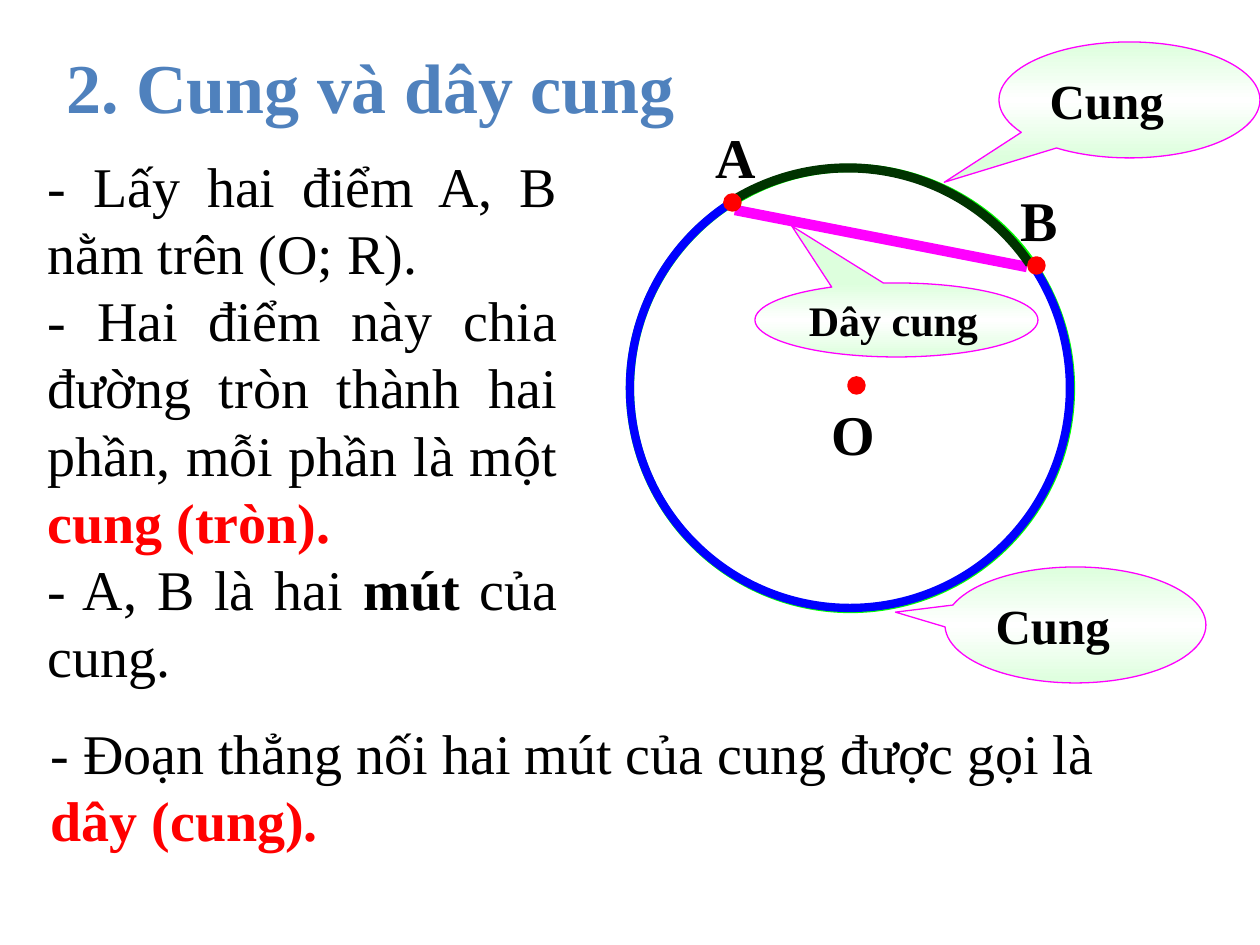
from copy import deepcopy

from lxml.etree import SubElement
from pptx import Presentation
from pptx.dml.color import RGBColor
from pptx.enum.shapes import MSO_CONNECTOR, MSO_SHAPE
from pptx.enum.text import MSO_ANCHOR, PP_ALIGN
from pptx.oxml.ns import qn
from pptx.util import Emu, Pt

BLACK = RGBColor(0x00, 0x00, 0x00)
WHITE = RGBColor(0xFF, 0xFF, 0xFF)
RED = RGBColor(0xFF, 0x00, 0x00)
BLUE = RGBColor(0x00, 0x00, 0xFF)
LIME = RGBColor(0x00, 0xFF, 0x00)
MAGENTA = RGBColor(0xFF, 0x00, 0xFF)
DARK_GREEN = RGBColor(0x00, 0x33, 0x00)
PALE_GREEN = RGBColor(0xDD, 0xFF, 0xDD)
TITLE_BLUE = RGBColor(0x4F, 0x81, 0xBD)
FONT = "Times New Roman"
ANGLE_A, ANGLE_B = 239.2, 325.7


def px(*lengths):
    """Turn pixel lengths into EMU at 126 pixels to the inch."""
    return [Emu(round(length * 914400 / 126)) for length in lengths]


def add_span(para, text, size=32, color=BLACK, bold=False):
    """Add one formatted run, with lines spaced at 1.2 times its size."""
    span = para.add_run()
    span.text = text
    span.font.name = FONT
    span.font.size = Pt(size)
    span.font.color.rgb = color
    span.font.bold = bold
    para.line_spacing = Pt(size * 1.2)


def add_text(page, box, paragraphs, wrap=True, align=PP_ALIGN.LEFT):
    """Add a text box from paragraphs of (text, format) pairs."""
    frame = page.shapes.add_textbox(*px(*box)).text_frame
    frame.word_wrap = wrap
    for index, spans in enumerate(paragraphs):
        para = frame.add_paragraph() if index else frame.paragraphs[0]
        para.alignment = align
        for text, style in spans:
            add_span(para, text, **style)


def add_shape(page, kind, box, fill=None, line=None, width=1):
    """Add a preset shape without shadow, with optional fill and line."""
    shape = page.shapes.add_shape(kind, *px(*box))
    shape.shadow.inherit = False
    if fill is None:
        shape.fill.background()
    else:
        shape.fill.solid()
        shape.fill.fore_color.rgb = fill
    if line is None:
        shape.line.fill.background()
    else:
        shape.line.color.rgb = line
        shape.line.width = Pt(width)
    return shape


def write_middle(shape, spans):
    """Write left-aligned text at mid height inside a shape."""
    frame = shape.text_frame
    frame.word_wrap = True
    frame.vertical_anchor = MSO_ANCHOR.MIDDLE
    para = frame.paragraphs[0]
    para.alignment = PP_ALIGN.LEFT
    for text, style in spans:
        add_span(para, text, **style)


def add_arc(page, box, start, end, color, width):
    """Draw a clockwise arc between two angles in degrees."""
    arc = add_shape(page, MSO_SHAPE.ARC, box, line=color, width=width)
    arc.adjustments[0] = start * 0.6
    arc.adjustments[1] = end * 0.6


def add_point(page, box, name, label_box):
    """Draw a red point and its letter, placed relative to the point."""
    left, top = box[:2]
    add_shape(page, MSO_SHAPE.OVAL, box, RED, RED, 2)
    dx, dy, width, height = label_box
    add_text(page, (left + dx, top + dy, width, height),
             [[(name, {"bold": True})]], wrap=False)


def add_callout(page, box, text, size, tip):
    """Draw an oval callout with a pale green gradient and a tip."""
    callout = add_shape(page, MSO_SHAPE.OVAL_CALLOUT, box, line=MAGENTA, width=0.75)
    callout.adjustments[0], callout.adjustments[1] = tip
    callout.fill.gradient()
    callout.fill.gradient_angle = 90
    stop_list = next(callout.element.iter(qn("a:gsLst")))
    stop_list.insert(1, deepcopy(stop_list[0]))
    for stop, position, color in zip(callout.fill.gradient_stops, (0, 0.5, 1),
                                     (PALE_GREEN, WHITE, PALE_GREEN)):
        stop.position = position
        stop.color.rgb = color
    write_middle(callout, [(text, {"size": size, "bold": True})])


def add_chord(page, start, end):
    """Draw the chord between two points."""
    chord = page.shapes.add_connector(MSO_CONNECTOR.STRAIGHT, *px(*start, *end))
    chord.line.color.rgb = MAGENTA
    chord.line.width = Pt(6)
    SubElement(chord.element.spPr, qn("a:effectLst"))


def add_circle_diagram(page, box):
    """Draw the circle, its two arcs, the chord, points and callouts."""
    left, top, side = box
    add_chord(page, (left + 105, top + 42), (left + 397, top + 99))
    add_shape(page, MSO_SHAPE.OVAL, (left, top, side, side), line=LIME, width=4.75)
    arc_side = side - 1
    add_arc(page, (left, top, arc_side, arc_side), ANGLE_B, ANGLE_A, BLUE, 4.75)
    add_arc(page, (left - 2, top, arc_side, arc_side), ANGLE_A, ANGLE_B, DARK_GREEN, 5.25)
    for name, dx, dy, label_box in (
        ("A", 95, 27, (-22, -79, 66, 79)),
        ("B", 399, 90, (-21, -79, 63, 79)),
        ("O", 219, 210, (-30, 15, 69, 79)),
    ):
        add_point(page, (left + dx, top + dy, 15, 15), name, label_box)
    for text, size, dx, dy, width, height, tip in (
        ("Cung", 28, 369, -126, 261, 116, (-0.71, 0.71)),
        ("Cung", 28, 315, 399, 261, 116, (-0.69, -0.11)),
        ("Dây cung", 24, 125, 115, 283, 74, (-0.37, -1.27)),
    ):
        add_callout(page, (left + dx, top + dy, width, height), text, size, tip)


def add_conclusion(page, box):
    """Write the definition of a chord on a white panel."""
    panel = add_shape(page, MSO_SHAPE.RECTANGLE, box, fill=WHITE)
    write_middle(panel, [
        ("- Đoạn thẳng nối hai mút của cung được gọi là ", {}),
        ("dây (cung).", {"color": RED, "bold": True}),
    ])


def add_title(page, box):
    """Write the section title."""
    style = {"size": 40, "color": TITLE_BLUE, "bold": True}
    add_text(page, box, [[("2. Cung và dây cung", style)]], wrap=False)


def add_explanation(page, box):
    """Write the justified explanation of arcs."""
    add_text(page, box, [
        [("- Lấy hai điểm A, B nằm trên (O; R).", {})],
        [("- Hai điểm này chia đường tròn thành hai phần, mỗi phần là một ", {}),
         ("cung (tròn).", {"color": RED, "bold": True})],
        [("- A, B là hai ", {}), ("mút ", {"bold": True}), ("của cung.", {})],
    ], align=PP_ALIGN.JUSTIFY)


def main():
    """Build the slide and save it."""
    deck = Presentation()
    deck.slide_width, deck.slide_height = px(1260, 945)
    page = deck.slides.add_slide(deck.slide_layouts[6])
    add_circle_diagram(page, (630, 168, 441))
    add_conclusion(page, (38, 711, 1097, 149))
    add_title(page, (54, 37, 640, 97))
    add_explanation(page, (35, 145, 535, 556))
    deck.save("out.pptx")


if __name__ == "__main__":
    main()
